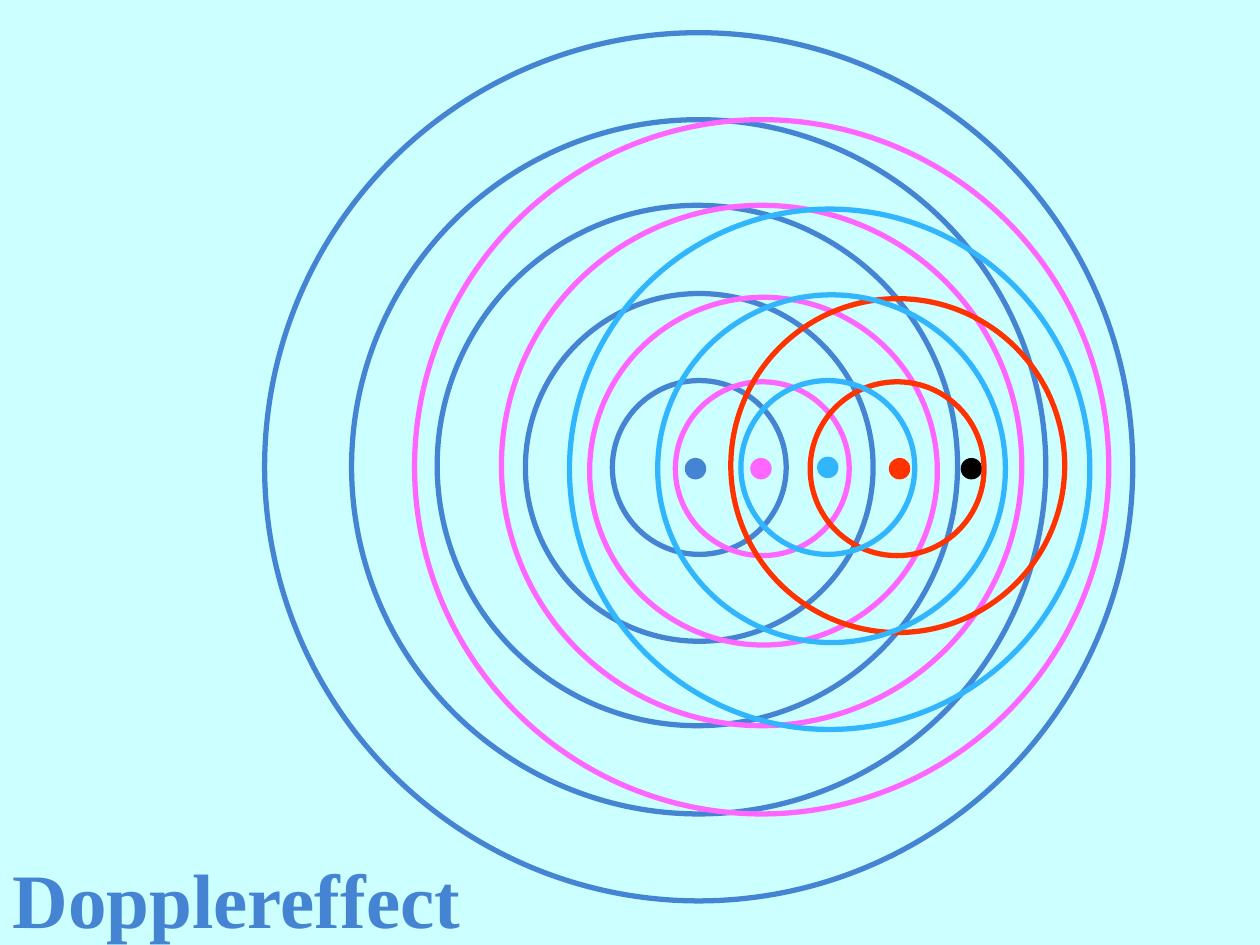
import pptx
import pptx.util
import pptx.dml.color
import pptx.enum.shapes
import pptx.enum.text

Inches = pptx.util.Inches
BLUE, PINK, CYAN, RED, BLACK = "4584D3", "FF66FF", "31B6FD", "FF3300", "000000"


def color(hex_value):
    return pptx.dml.color.RGBColor.from_string(hex_value)


def add_circle(shapes, left, top, diameter, hex_value, line_width, filled):
    circle = shapes.add_shape(
        pptx.enum.shapes.MSO_SHAPE.OVAL,
        Inches(left), Inches(top), Inches(diameter), Inches(diameter),
    )
    circle.shadow.inherit = False
    circle.line.color.rgb = color(hex_value)
    circle.line.width = pptx.util.Pt(line_width)
    if filled:
        circle.fill.solid()
        circle.fill.fore_color.rgb = color(hex_value)
    else:
        circle.fill.background()


deck = pptx.Presentation()
deck.slide_width = Inches(10)
deck.slide_height = Inches(7.5)
page = deck.slides.add_slide(deck.slide_layouts[5])
page.background.fill.solid()
page.background.fill.fore_color.rgb = color("CCFFFF")

title = page.shapes.title
title_place = {"left": 0, "top": 6.75, "width": 10, "height": 0.75}
for name, value in title_place.items():
    setattr(title, name, Inches(value))
frame_format = {
    "word_wrap": True,
    "auto_size": pptx.enum.text.MSO_AUTO_SIZE.NONE,
    "vertical_anchor": pptx.enum.text.MSO_ANCHOR.MIDDLE,
}
for name, value in frame_format.items():
    setattr(title.text_frame, name, value)
para = title.text_frame.paragraphs[0]
para.alignment = pptx.enum.text.PP_ALIGN.LEFT
span = para.add_run()
span.text = "Dopplereffect"
font_format = {"name": "Times New Roman", "size": pptx.util.Pt(44), "bold": True}
for name, value in font_format.items():
    setattr(span.font, name, value)
span.font.color.rgb = color(BLUE)

source_dots = [
    (7.63, 3.64, BLACK),
    (5.96, 3.64, PINK),
    (5.44, 3.64, BLUE),
    (6.49, 3.63, CYAN),
    (7.06, 3.64, RED),
]
wave_groups = [
    (BLUE, [(2.1, 0.26, 6.89), (2.79, 0.95, 5.51), (3.47, 1.63, 4.13),
            (4.17, 2.33, 2.76), (4.86, 3.02, 1.38)]),
    (PINK, [(3.29, 0.95, 5.51), (3.98, 1.63, 4.13), (4.68, 2.36, 2.76),
            (5.36, 3.03, 1.38)]),
    (RED, [(5.8, 2.37, 2.65), (6.43, 3.03, 1.38)]),
    (CYAN, [(4.52, 1.66, 4.13), (5.22, 2.34, 2.76), (5.88, 3.02, 1.38)]),
]

for left, top, hex_value in source_dots:
    add_circle(page.shapes, left, top, 0.16, hex_value, 0.75, True)

for hex_value, waves in wave_groups:
    group = page.shapes.add_group_shape()
    for left, top, diameter in waves:
        add_circle(group.shapes, left, top, diameter, hex_value, 3, False)

deck.save("out.pptx")
